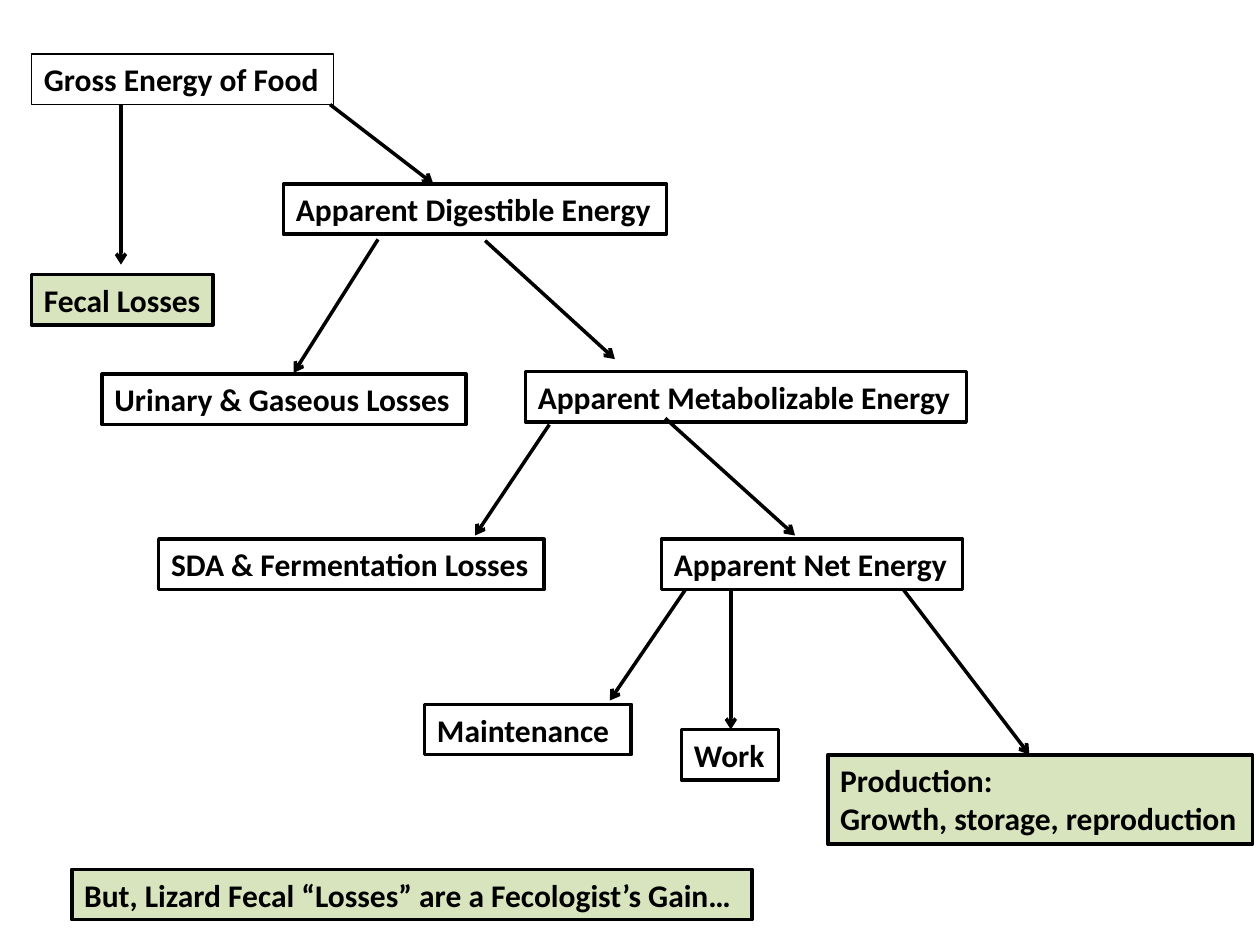
from dataclasses import dataclass
from typing import Optional

from lxml.etree import SubElement
from pptx import Presentation
from pptx.dml.color import RGBColor
from pptx.enum.shapes import MSO_CONNECTOR
from pptx.enum.text import MSO_AUTO_SIZE
from pptx.oxml.ns import qn
from pptx.util import Inches, Pt

BLACK = RGBColor(0x00, 0x00, 0x00)
GREEN = RGBColor(0xD7, 0xE4, 0xBD)


@dataclass
class Box:
    text: str
    left: float
    top: float
    width: float
    height: float = 0.4
    fill: Optional[RGBColor] = None
    border: float = 2


@dataclass
class Arrow:
    x1: float
    y1: float
    x2: float
    y2: float


BOXES = [
    Box("Gross Energy of Food", 0.25, 0.43, 2.4, border=0.75),
    Box("Fecal Losses", 0.25, 2.18, 1.44, fill=GREEN),
    Box("Apparent Digestible Energy", 2.25, 1.46, 3.04),
    Box("Urinary & Gaseous Losses", 0.81, 2.97, 2.89),
    Box("Apparent Metabolizable Energy", 4.17, 2.95, 3.5),
    Box("Apparent Net Energy", 5.25, 4.28, 2.39),
    Box("SDA & Fermentation Losses", 1.26, 4.28, 3.06),
    Box("Maintenance", 3.37, 5.59, 1.64),
    Box("Work", 5.41, 5.79, 0.77),
    Box("Production:\nGrowth, storage, reproduction", 6.57, 5.99, 3.37, 0.71, GREEN),
    Box("But, Lizard Fecal “Losses” are a Fecologist’s Gain…", 0.57, 6.9, 5.4, fill=GREEN),
]

ARROWS = [
    Arrow(0.96, 0.83, 0.96, 2.1),
    Arrow(2.62, 0.83, 3.44, 1.46),
    Arrow(3, 1.9, 2.33, 2.96),
    Arrow(3.85, 1.91, 4.88, 2.85),
    Arrow(4.36, 3.37, 3.77, 4.25),
    Arrow(5.28, 3.32, 6.31, 4.25),
    Arrow(5.44, 4.68, 4.84, 5.56),
    Arrow(5.8, 4.68, 5.8, 5.79),
    Arrow(7.17, 4.68, 8.17, 5.99),
]


def write_text(tf, text: str, *, size: float = 18, font: str = "Calibri",
               bold: bool = True, color: RGBColor = BLACK) -> None:
    for i, line in enumerate(text.split("\n")):
        p = tf.add_paragraph() if i else tf.paragraphs[0]
        r = p.add_run()
        r.text = line
        r.font.size = Pt(size)
        r.font.name = font
        r.font.bold = bold
        r.font.color.rgb = color


def draw_box(s, box: Box) -> None:
    sp = s.shapes.add_textbox(Inches(box.left), Inches(box.top),
                              Inches(box.width), Inches(box.height))
    if box.fill is not None:
        sp.fill.solid()
        sp.fill.fore_color.rgb = box.fill
    sp.line.color.rgb = BLACK
    sp.line.width = Pt(box.border)
    tf = sp.text_frame
    tf.word_wrap = True
    tf.auto_size = MSO_AUTO_SIZE.SHAPE_TO_FIT_TEXT
    tf.margin_right = 0
    write_text(tf, box.text)


def draw_arrow(s, arrow: Arrow) -> None:
    sp = s.shapes.add_connector(MSO_CONNECTOR.STRAIGHT, Inches(arrow.x1), Inches(arrow.y1),
                                Inches(arrow.x2), Inches(arrow.y2))
    sp.line.color.rgb = BLACK
    sp.line.width = Pt(2)
    SubElement(sp.line._get_or_add_ln(), qn("a:tailEnd"), type="arrow")
    SubElement(sp._element.spPr, qn("a:effectLst"))


def main() -> None:
    prs = Presentation()
    prs.slide_width, prs.slide_height = Inches(10), Inches(7.5)
    s = prs.slides.add_slide(prs.slide_layouts[6])
    for box in BOXES:
        draw_box(s, box)
    for arrow in ARROWS:
        draw_arrow(s, arrow)
    prs.save("out.pptx")


if __name__ == "__main__":
    main()
